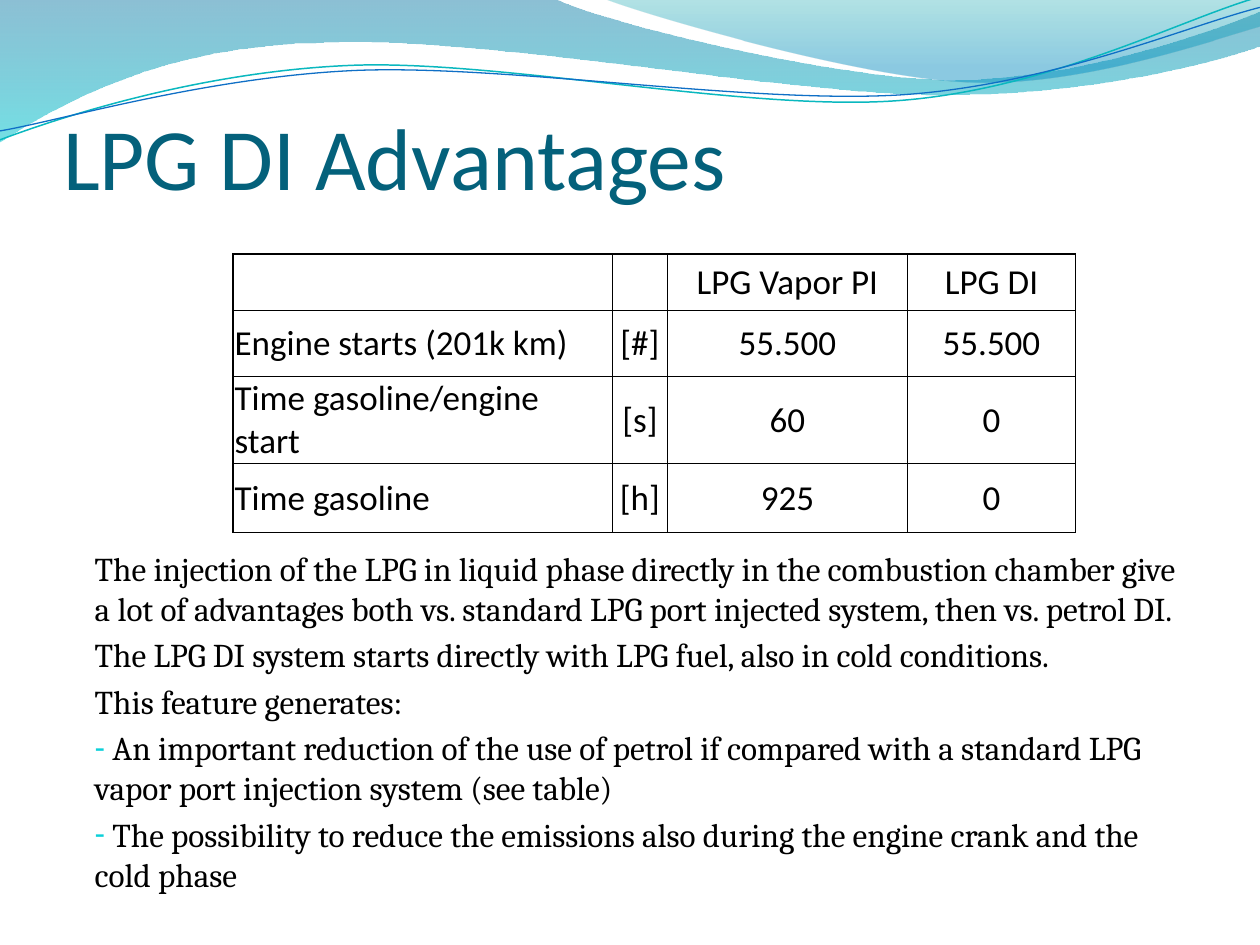
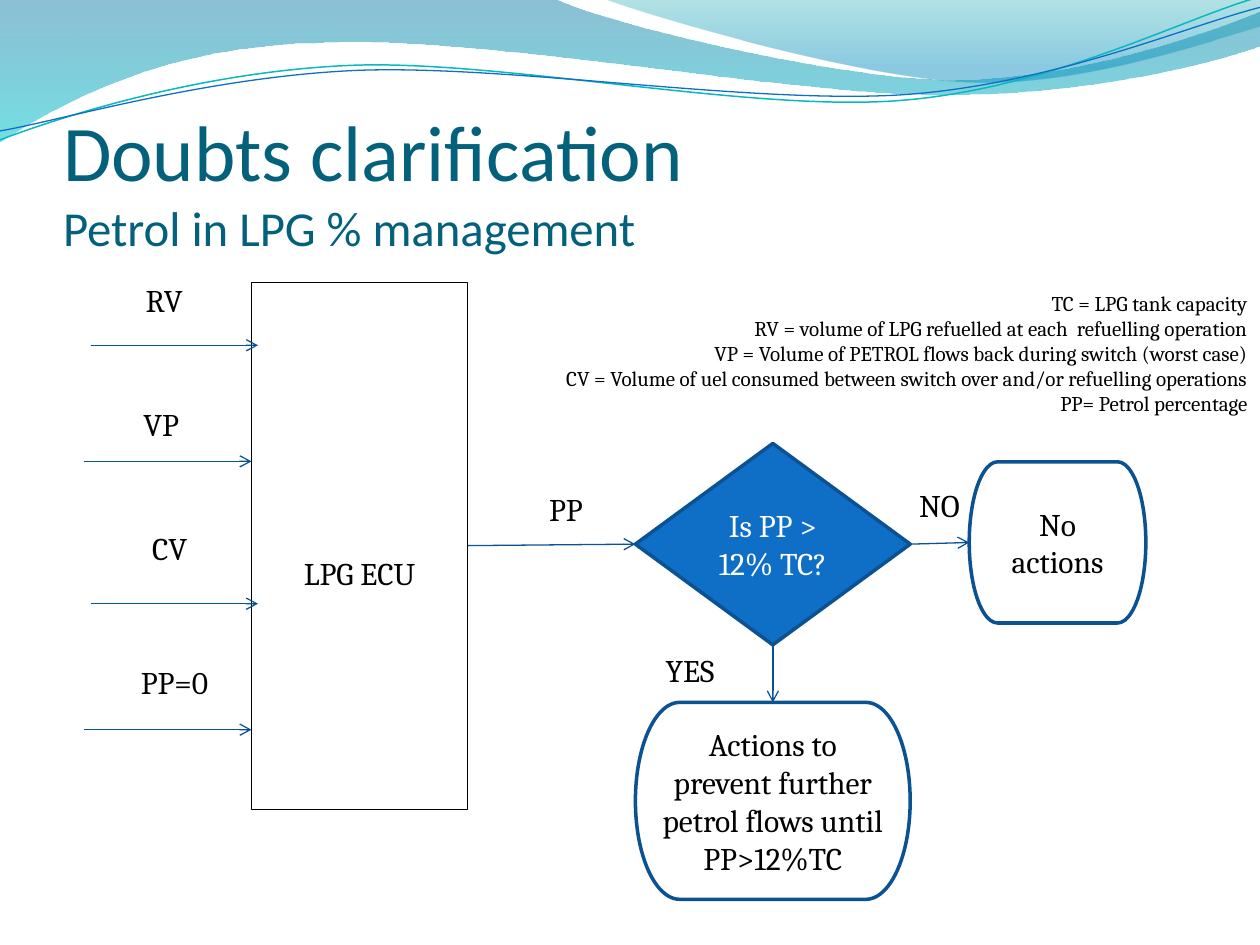
from lxml.etree import SubElement
from pptx import Presentation
from pptx.dml.color import RGBColor
from pptx.enum.shapes import MSO_CONNECTOR, MSO_SHAPE
from pptx.enum.text import MSO_ANCHOR, MSO_AUTO_SIZE, PP_ALIGN
from pptx.oxml.ns import qn
from pptx.util import Cm, Pt

# Shared look
BLACK = RGBColor(0x00, 0x00, 0x00)
WHITE = RGBColor(0xFF, 0xFF, 0xFF)
TITLE_BLUE = RGBColor(0x04, 0x61, 0x7B)
FILL_BLUE = RGBColor(0x0F, 0x6F, 0xC6)
OUTLINE_BLUE = RGBColor(0x0B, 0x52, 0x92)
ARROW_BLUE = RGBColor(0x09, 0x52, 0x95)
TEAL = RGBColor(0x0A, 0xB8, 0xBF)
BULLET_CYAN = RGBColor(0x0B, 0xD0, 0xD9)
HEADING_FONT, BODY_FONT = "Calibri", "Cambria"

# Waves, in cm: a point is a straight step, three points are a Bezier curve.
# Gradient stops are (position, colour, opacity in percent).
WAVE_BANDS = [
    ([(0, -0.03), (11.18, -0.03),
      ((12.09, 0.43), (16.87, 1.6), (19.25, 1.6)),
      ((21.67, 1.6), (24.33, 0.66), (25.4, 0.23)),
      (25.43, 0.91),
      ((24.97, 1.12), (22.1, 1.93), (18.95, 1.91)),
      ((15.8, 1.91), (9.7, 0.71), (6.53, 0.86)),
      ((3.28, 0.89), (1.17, 2.11), (-0.03, 2.87))],
     [(0, RGBColor(0x00, 0x74, 0xA1), 45), (1, RGBColor(0x00, 0xC6, 0xCF), 55)]),
    ([(12.17, -0.03),
      ((12.93, 0.28), (17.32, 1.57), (19.53, 1.65)),
      ((21.74, 1.75), (24.41, 0.81), (25.4, 0.53)),
      (25.4, 0)],
     [(0, RGBColor(0x00, 0xA1, 0xA9), 30), (0.8, RGBColor(0x00, 0x8B, 0xBF), 45)]),
]
WAVE_LINES = [
    ([(0, 2.82),
      ((1.22, 2.36), (4.01, 1.45), (7.04, 1.32)),
      ((10.03, 1.19), (15.06, 2.26), (18.11, 2.03)),
      ((21.16, 1.8), (23.83, 0.38), (25.35, -0.05))], TEAL, 0.85),
    ([(0, 2.64),
      ((1.19, 2.44), (4.17, 1.55), (7.19, 1.42)),
      ((10.24, 1.3), (15.16, 2.11), (18.21, 1.91)),
      ((21.23, 1.7), (23.9, 0.53), (25.4, 0.15))], FILL_BLUE, 0.75),
]

# Advantages slide
ADVANTAGES_TITLE = [("LPG DI Advantages", 50)]
START_TABLE = [
    ("", "", "LPG Vapor PI", "LPG DI"),
    ("Engine starts (201k km)", "[#]", "55.500", "55.500"),
    ("Time gasoline/engine start", "[s]", "60", "0"),
    ("Time gasoline", "[h]", "925", "0"),
]
COLUMN_WIDTHS = [7.65, 1.1, 4.85, 3.38]
ROW_HEIGHTS = [1.13, 1.33, 1.74, 1.4]
ADVANTAGES = [
    "The injection of the LPG in liquid phase directly in the combustion chamber "
    "give a lot of advantages both vs. standard LPG port injected system, then vs. petrol DI.",
    "The LPG DI system starts directly with LPG fuel, also in cold conditions.",
    "This feature generates:",
    " An important reduction of the use of petrol if compared with a standard LPG "
    "vapor port injection system (see table)",
    " The possibility to reduce the emissions also during the engine crank and the cold phase",
]
FIRST_BULLET = 3

# Flow chart slide
DOUBTS_TITLE = [("Doubts clarification", 45), ("Petrol in LPG % management", 27.9)]
LEGEND = [
    "TC = LPG tank capacity",
    "RV = volume of LPG refuelled at each  refuelling operation",
    "VP = Volume of PETROL flows back during switch (worst case)",
    "CV = Volume of uel consumed between switch over and/or refuelling operations",
    "PP= Petrol percentage",
]
# name: (preset, box, text, fill, line colour, line width, text colour)
FLOW_BOXES = {
    "ecu": (MSO_SHAPE.RECTANGLE, (5.07, 5.69, 4.36, 10.62), "LPG ECU",
            None, BLACK, 0.25, BLACK),
    "check": (MSO_SHAPE.FLOWCHART_DECISION, (12.81, 8.94, 5.54, 4.06), "Is PP > 12% TC?",
              FILL_BLUE, OUTLINE_BLUE, 2, WHITE),
    "prevent": (MSO_SHAPE.FLOWCHART_TERMINATOR, (12.81, 14.16, 5.54, 3.97),
                "Actions to prevent further petrol flows until PP>12%TC",
                None, OUTLINE_BLUE, 2, BLACK),
    "nothing": (MSO_SHAPE.FLOWCHART_TERMINATOR, (19.54, 9.31, 3.56, 3.25), "No actions",
                None, OUTLINE_BLUE, 2, BLACK),
}
# (from box, side, to box, side), sides: 0 top, 1 left, 2 bottom, 3 right
FLOW_LINKS = [("ecu", 3, "check", 1), ("check", 2, "prevent", 0), ("check", 3, "nothing", 1)]
# (label, label centre, label top, arrow start, arrow height)
INPUTS = [
    ("RV", 3.31, 5.53, 1.83, 6.96),
    ("VP", 3.25, 8.04, 1.7, 9.3),
    ("CV", 3.42, 10.54, 1.83, 12.17),
    ("PP=0", 3.52, 13.23, 1.7, 14.71),
]
FLOW_LABELS = [("PP", 11.41, 9.75), ("NO", 18.94, 9.67), ("YES", 13.91, 13)]
INPUT_ARROW_LENGTH = 3.37
LABEL_WIDTH, LABEL_HEIGHT = 2.77, 0.91


def write(frame, paragraphs, size, font=BODY_FONT, color=BLACK,
          align=PP_ALIGN.CENTER, anchor=MSO_ANCHOR.TOP, margins=(0.25, 0.13, 0.25, 0.13)):
    """Fill a frame; a paragraph is a string or a list of (line, size)."""
    frame.word_wrap = True
    frame.auto_size = MSO_AUTO_SIZE.NONE
    frame.vertical_anchor = anchor
    (frame.margin_left, frame.margin_top,
     frame.margin_right, frame.margin_bottom) = map(Cm, margins)
    for index, content in enumerate(paragraphs):
        paragraph = frame.add_paragraph() if index else frame.paragraphs[0]
        paragraph.alignment = align
        lines = [(content, size)] if isinstance(content, str) else content
        for number, (text, line_size) in enumerate(lines):
            if number:
                paragraph.add_line_break()
            run = paragraph.add_run()
            run.text = text
            run.font.size = Pt(line_size)
            run.font.name = font
            run.font.color.rgb = color


def place(shape, left, top, width, height):
    shape.left, shape.top, shape.width, shape.height = map(Cm, (left, top, width, height))


def add_wave(slide, steps, close):
    """Build the outline from its end points, then bend the curved steps."""
    is_curve = [isinstance(step[0], tuple) for step in steps]
    ends = [step[-1] if curved else step for step, curved in zip(steps, is_curve)]
    points = [(Cm(x), Cm(y)) for x, y in ends]
    builder = slide.shapes.build_freeform(*points[0])
    builder.add_line_segments(points[1:], close=close)
    shape = builder.convert_to_shape()
    shape.shadow.inherit = False
    outline = next(shape.element.iter(qn("a:path")))
    for segment, step, curved in zip(list(outline), steps, is_curve):
        if curved:
            curve = SubElement(outline, qn("a:cubicBezTo"))
            for x, y in step:
                SubElement(curve, qn("a:pt"), x=str(Cm(x) - shape.left), y=str(Cm(y) - shape.top))
            outline.replace(segment, curve)
    return shape


def add_waves(slide, master):
    """Draw the waves and move them to the back of the master."""
    waves = []
    for steps, stops in WAVE_BANDS:
        band = add_wave(slide, steps, True)
        band.line.fill.background()
        band.fill.gradient()
        band.fill.gradient_angle = 270
        for stop, (position, color, _) in zip(band.fill.gradient_stops, stops):
            stop.position = position
            stop.color.rgb = color
        colors = list(band.element.spPr.iter(qn("a:srgbClr")))
        for color_element, (_, _, opacity) in zip(colors, stops):
            SubElement(color_element, qn("a:alpha"), val=str(opacity * 1000))
        waves.append(band)
    for steps, color, width in WAVE_LINES:
        curve = add_wave(slide, steps, False)
        curve.fill.background()
        curve.line.color.rgb = color
        curve.line.width = Pt(width)
        waves.append(curve)
    for index, wave in enumerate(waves):
        master.shapes.element.insert(2 + index, wave.element)


def add_title(slide, lines):
    place(slide.shapes.title, 1.27, 1.95, 22.86, 3.18)
    write(slide.shapes.title.text_frame, [lines], None, font=HEADING_FONT, color=TITLE_BLUE,
          align=PP_ALIGN.LEFT, margins=(0, 0.13, 0, 0))


def add_label(slide, box, paragraphs, size=18, align=PP_ALIGN.CENTER):
    label = slide.shapes.add_textbox(*map(Cm, box))
    write(label.text_frame, paragraphs, size, align=align)


def add_arrow(slide, start=(0, 0), end=(0, 0)):
    arrow = slide.shapes.add_connector(MSO_CONNECTOR.STRAIGHT, *map(Cm, (*start, *end)))
    arrow.line.color.rgb = ARROW_BLUE
    arrow.line.width = Pt(0.75)
    properties = arrow.element.spPr
    SubElement(properties.find(qn("a:ln")), qn("a:tailEnd"), type="arrow")
    SubElement(properties, qn("a:effectLst"))
    return arrow


def set_borders(cell, row, column):
    """Thick lines on the outside of the table, thin ones inside."""
    outer = {"L": column == 0, "R": column == len(COLUMN_WIDTHS) - 1,
             "T": row == 0, "B": row == len(ROW_HEIGHTS) - 1}
    properties = cell._tc.get_or_add_tcPr()
    for side, is_outer in outer.items():
        line = SubElement(properties, qn(f"a:ln{side}"), w=str(Pt(1 if is_outer else 0.5)))
        SubElement(SubElement(line, qn("a:solidFill")), qn("a:srgbClr"), val=str(BLACK))


def add_start_table(slide):
    frame = slide.shapes.add_table(len(ROW_HEIGHTS), len(COLUMN_WIDTHS), Cm(4.7), Cm(5.12),
                                   Cm(sum(COLUMN_WIDTHS)), Cm(sum(ROW_HEIGHTS)))
    table = frame.table
    table.first_row = table.horz_banding = False
    for column, width in zip(table.columns, COLUMN_WIDTHS):
        column.width = Cm(width)
    for row, (height, values) in enumerate(zip(ROW_HEIGHTS, START_TABLE)):
        table.rows[row].height = Cm(height)
        for column, value in enumerate(values):
            cell = table.cell(row, column)
            set_borders(cell, row, column)
            cell.fill.background()
            cell.vertical_anchor = MSO_ANCHOR.MIDDLE
            cell.margin_left = cell.margin_right = cell.margin_top = Cm(0.03)
            cell.margin_bottom = 0
            if value:
                paragraph = cell.text_frame.paragraphs[0]
                paragraph.alignment = PP_ALIGN.CENTER if column else PP_ALIGN.LEFT
                run = paragraph.add_run()
                run.text = value
                run.font.size = Pt(20)
                run.font.name = HEADING_FONT
                run.font.color.rgb = BLACK


def add_advantages(slide):
    body = slide.placeholders[1]
    place(body, 0.9, 10.92, 23.24, 8.13)
    write(body.text_frame, ADVANTAGES, 19, align=PP_ALIGN.LEFT)
    for index, paragraph in enumerate(body.text_frame.paragraphs):
        properties = paragraph._p.get_or_add_pPr()
        properties.set("marL", str(Cm(0.76)))
        properties.set("indent", "0")
        if index < FIRST_BULLET:
            SubElement(properties, qn("a:buNone"))
            continue
        bullet_color = SubElement(properties, qn("a:buClr"))
        SubElement(bullet_color, qn("a:srgbClr"), val=str(BULLET_CYAN))
        SubElement(properties, qn("a:buSzPct"), val="95000")
        SubElement(properties, qn("a:buChar"), char="-")


def add_flow_chart(slide):
    boxes = {}
    for name, (preset, box, text, fill, line, width, color) in FLOW_BOXES.items():
        shape = slide.shapes.add_shape(preset, *map(Cm, box))
        shape.shadow.inherit = False
        if fill is None:
            shape.fill.background()
        else:
            shape.fill.solid()
            shape.fill.fore_color.rgb = fill
        shape.line.color.rgb = line
        shape.line.width = Pt(width)
        write(shape.text_frame, [text], 18, color=color, anchor=MSO_ANCHOR.MIDDLE)
        boxes[name] = shape
    boxes["ecu"].text_frame.margin_top = Cm(1.22)  # name sits just below the arrow

    for source, source_side, target, target_side in FLOW_LINKS:
        arrow = add_arrow(slide)
        arrow.begin_connect(boxes[source], source_side)
        arrow.end_connect(boxes[target], target_side)

    labels = list(FLOW_LABELS)
    for text, centre, top, start, height in INPUTS:
        add_arrow(slide, (start, height), (start + INPUT_ARROW_LENGTH, height))
        labels.append((text, centre, top))
    for text, centre, top in labels:
        add_label(slide, (centre - LABEL_WIDTH / 2, top, LABEL_WIDTH, LABEL_HEIGHT), [text])


def main():
    presentation = Presentation()
    presentation.slide_width, presentation.slide_height = Cm(25.4), Cm(19.05)

    # Advantages: table and list
    slide = presentation.slides.add_slide(presentation.slide_layouts[1])
    add_waves(slide, presentation.slide_master)
    add_title(slide, ADVANTAGES_TITLE)
    add_start_table(slide)
    add_advantages(slide)

    # Doubts: flow chart and legend
    slide = presentation.slides.add_slide(presentation.slide_layouts[5])
    add_title(slide, DOUBTS_TITLE)
    add_flow_chart(slide)
    add_label(slide, (6.5, 5.72, 18.9, 2.82), LEGEND, size=12, align=PP_ALIGN.RIGHT)

    presentation.save("out.pptx")


if __name__ == "__main__":
    main()
